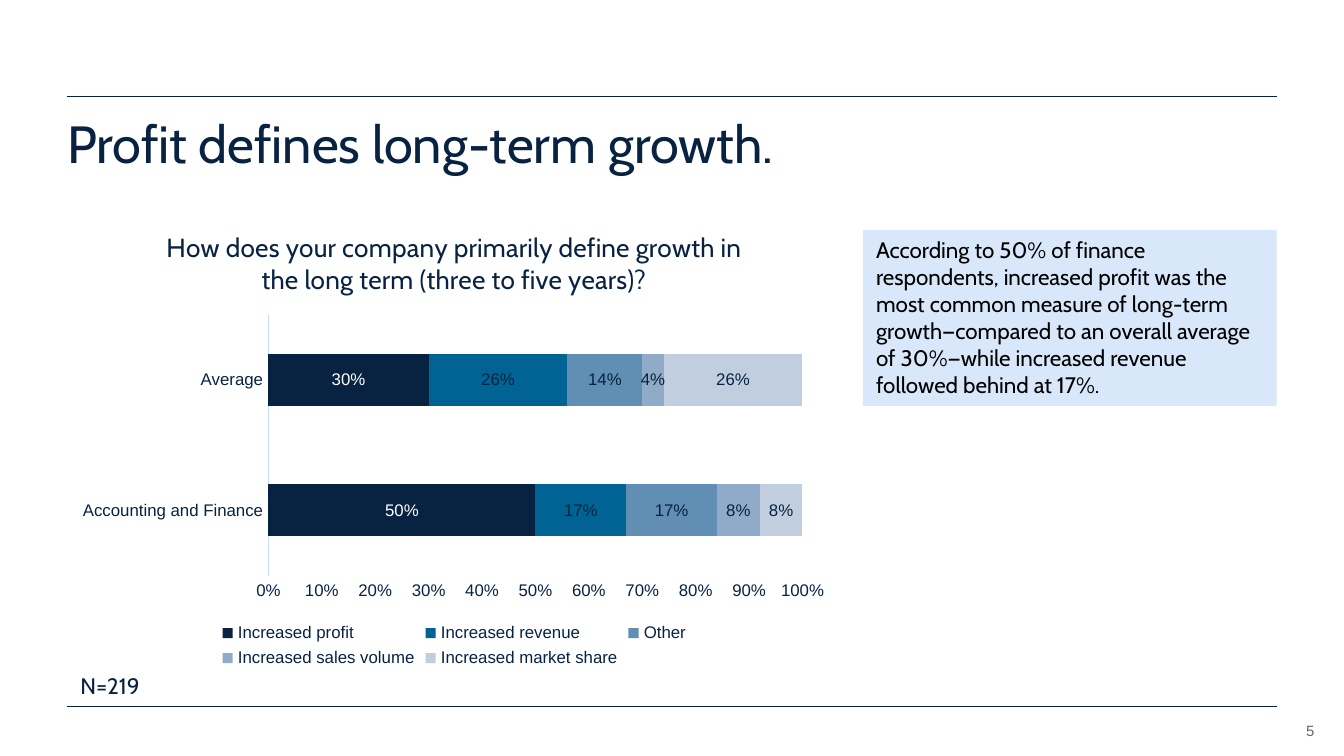
from lxml import etree
from pptx import Presentation
from pptx import util as u
from pptx.chart.data import CategoryChartData
from pptx.dml.color import RGBColor
from pptx.enum import chart as charts, shapes, text
from pptx.oxml import parse_xml
from pptx.oxml.ns import qn

NAVY = RGBColor(0x08, 0x22, 0x41)
TEAL = RGBColor(0x00, 0x63, 0x93)
STEEL = RGBColor(0x61, 0x8E, 0xB3)
MIST = RGBColor(0x8F, 0xAB, 0xC8)
PALE = RGBColor(0xC1, 0xCE, 0xDF)
AXIS_BLUE = RGBColor(0xC5, 0xDC, 0xF8)
CALLOUT_BLUE = RGBColor(0xD8, 0xE8, 0xFA)
GRAY = RGBColor(0x66, 0x66, 0x66)
WHITE = RGBColor(0xFF, 0xFF, 0xFF)
BLACK = RGBColor(0, 0, 0)


def style_font(font, size, color, name="Arial"):
    font.size = u.Pt(size)
    font.name = name
    font.bold = False
    font.color.rgb = color


def write(shape, words, size, color, name="Cabin", align=text.PP_ALIGN.LEFT, inset=True):
    frame = shape.text_frame
    frame.word_wrap = True
    if not inset:
        frame.margin_left = frame.margin_right = frame.margin_top = frame.margin_bottom = 0
    paragraph = frame.paragraphs[0]
    paragraph.alignment = align
    run = paragraph.add_run()
    run.text = words
    style_font(run.font, size, color, name)
    return frame


# A 16:9 slide, 10 inches wide
presentation = Presentation()
presentation.slide_width = u.Inches(10)
presentation.slide_height = u.Inches(10 * 9 / 16)
slide = presentation.slides.add_slide(presentation.slide_layouts[6])

# Rules above and below the content
for y in (0.72, 5.26):
    rule = slide.shapes.add_connector(
        shapes.MSO_CONNECTOR.STRAIGHT, u.Inches(0.5), u.Inches(y), u.Inches(9.5), u.Inches(y))
    rule.line.color.rgb = NAVY
    rule.line.width = u.Pt(0.5)
    etree.SubElement(rule._element.spPr, qn("a:effectLst"))

# Page number
number = slide.shapes.add_textbox(u.Inches(9.31), u.Inches(5.32), u.Inches(0.47), u.Inches(0.18))
frame = write(number, "5", 8, GRAY, "Arial", text.PP_ALIGN.RIGHT, inset=False)
frame.vertical_anchor = text.MSO_ANCHOR.BOTTOM

# Title
title = slide.shapes.add_textbox(u.Inches(0.5), u.Inches(0.88), u.Inches(9), u.Inches(0.55))
frame = write(title, "Profit defines long-term growth.", 28, NAVY, inset=False)
frame.paragraphs[0].line_spacing = 0.9

# Callout
callout = slide.shapes.add_shape(
    shapes.MSO_SHAPE.RECTANGLE, u.Inches(6.42), u.Inches(1.71), u.Inches(3.08), u.Inches(1.31))
callout.shadow.inherit = False
callout.fill.solid()
callout.fill.fore_color.rgb = CALLOUT_BLUE
callout.line.fill.background()
frame = write(callout, "According to 50% of finance respondents, increased profit was the most common "
              "measure of long-term growth—compared to an overall average of 30%—while increased "
              "revenue followed behind at 17%.", 12, BLACK)
frame.vertical_anchor = text.MSO_ANCHOR.TOP

# Chart data: name, values, bar colour, label colour
series_rows = [
    ("Increased profit", (0.5, 0.3), NAVY, WHITE),
    ("Increased revenue", (0.17, 0.26), TEAL, NAVY),
    ("Other", (0.17, 0.14), STEEL, NAVY),
    ("Increased sales volume", (0.08, 0.04), MIST, NAVY),
    ("Increased market share", (0.08, 0.26), PALE, NAVY),
]
data = CategoryChartData(number_format="0%")
data.categories = ["Accounting and Finance", "Average"]
for name, values, _, _ in series_rows:
    data.add_series(name, values)
chart = slide.shapes.add_chart(
    charts.XL_CHART_TYPE.BAR_STACKED_100, u.Inches(0.5), u.Inches(1.55),
    u.Inches(5.76), u.Inches(3.46), data).chart
style_font(chart.font, 10, NAVY)

# Chart title
chart.has_title = True
run = chart.chart_title.text_frame.paragraphs[0].add_run()
run.text = "How does your company primarily define growth in the long term (three to five years)?"
style_font(run.font, 14, NAVY, "Cabin")
chart.chart_title.include_in_layout = False

# Bars and their labels
plot = chart.plots[0]
plot.gap_width = 150
plot.overlap = 100
plot.vary_by_categories = False
for series, (_, _, bar_color, label_color) in zip(plot.series, series_rows):
    series.format.fill.solid()
    series.format.fill.fore_color.rgb = bar_color
    labels = series.data_labels
    labels.show_value = True
    labels.number_format = "0%"
    labels.number_format_is_linked = False
    labels.position = charts.XL_LABEL_POSITION.CENTER
    style_font(labels.font, 9, label_color)

# Axes
for axis in (chart.category_axis, chart.value_axis):
    axis.has_major_gridlines = False
    axis.major_tick_mark = axis.minor_tick_mark = charts.XL_TICK_MARK.NONE
    style_font(axis.tick_labels.font, 9, NAVY)
chart.category_axis.format.line.color.rgb = AXIS_BLUE
chart.category_axis.format.line.width = u.Pt(0.75)
value_axis = chart.value_axis
value_axis.format.line.fill.background()
value_axis.minimum_scale, value_axis.maximum_scale, value_axis.major_unit = 0, 1, 0.1
value_axis.tick_labels.number_format = "0%"
value_axis.tick_labels.number_format_is_linked = False

# Legend
chart.has_legend = True
chart.legend.position = charts.XL_LEGEND_POSITION.BOTTOM
chart.legend.include_in_layout = False
style_font(chart.legend.font, 9, NAVY)

# Fixed plot area, as shares of the chart
plot_area = chart._chartSpace.chart.plotArea
for old_layout in plot_area.findall(qn("c:layout")):
    plot_area.remove(old_layout)
plot_area.insert(0, parse_xml(
    '<c:layout xmlns:c="http://schemas.openxmlformats.org/drawingml/2006/chart"><c:manualLayout>'
    '<c:layoutTarget val="inner"/><c:xMode val="edge"/><c:yMode val="edge"/>'
    '<c:x val="0.26"/><c:y val="0.23"/><c:w val="0.69"/><c:h val="0.56"/>'
    '</c:manualLayout></c:layout>'))

# Sample size
sample = slide.shapes.add_textbox(u.Inches(0.5), u.Inches(4.95), u.Inches(1.04), u.Inches(0.3))
write(sample, "N=219", 12, NAVY)

presentation.save("out.pptx")
